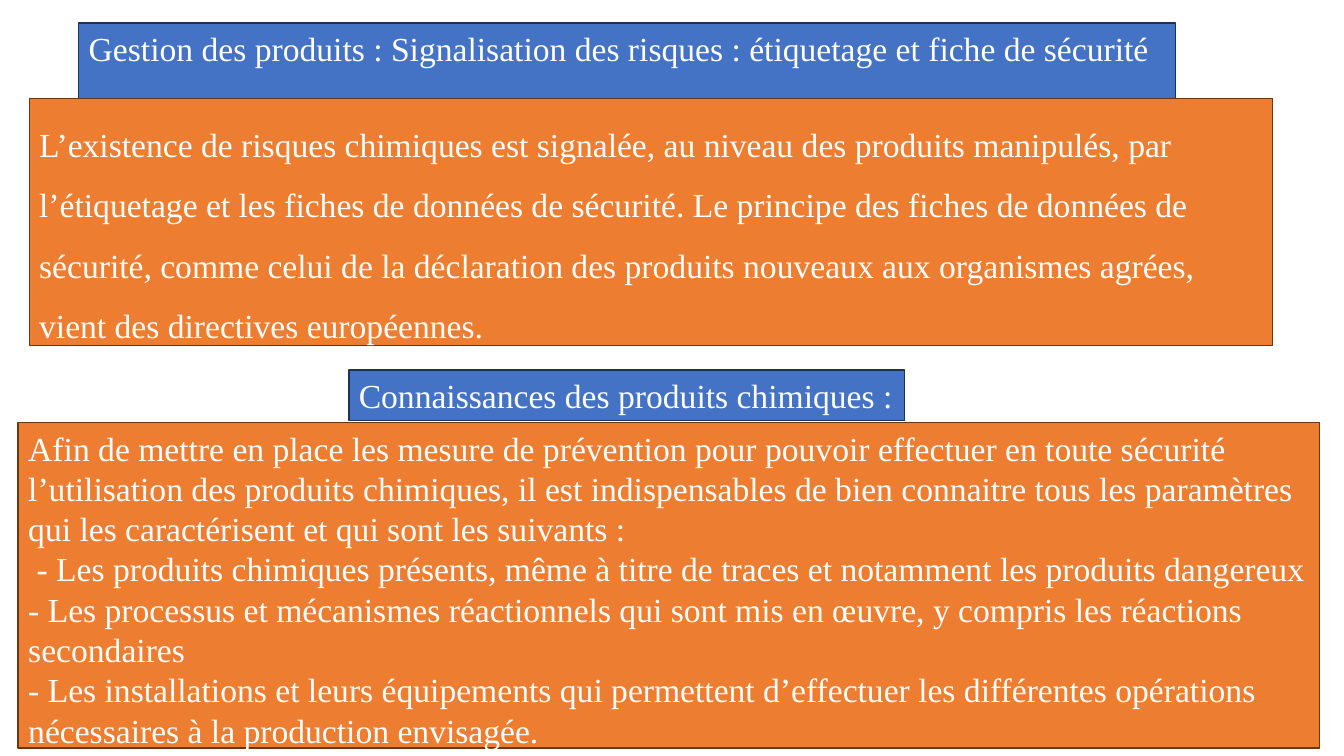
from dataclasses import dataclass

from lxml.etree import SubElement
from pptx import Presentation
from pptx.dml.color import RGBColor
from pptx.enum.shapes import MSO_SHAPE as Shape
from pptx.enum.text import MSO_ANCHOR as Anchor, MSO_AUTO_SIZE as AutoSize, PP_ALIGN as Align
from pptx.oxml.ns import qn
from pptx.util import Inches, Pt


@dataclass(frozen=True)
class Theme:
    font: str = "Times New Roman"
    size: int = 24
    text: str = "FFFFFF"
    heading: tuple = ("4472C4", "1E3256")
    passage: tuple = ("ED7D31", "683715")


THEME = Theme()

TITLE = "Gestion des produits : Signalisation des risques : étiquetage et fiche de sécurité"
SIGNALLING = (
    "L’existence de risques chimiques est signalée, au niveau des produits manipulés, par "
    "l’étiquetage et les fiches de données de sécurité. Le principe des fiches de données de "
    "sécurité, comme celui de la déclaration des produits nouveaux aux organismes agrées, "
    "vient des directives européennes."
)
SUBTITLE = "Connaissances des produits chimiques :"
KNOWLEDGE = [
    "Afin de mettre en place les mesure de prévention pour pouvoir effectuer en toute sécurité "
    "l’utilisation des produits chimiques, il est indispensables de bien connaitre tous les "
    "paramètres qui les caractérisent et qui sont les suivants :",
    " - Les produits chimiques présents, même à titre de traces et notamment les produits "
    "dangereux - Les processus et mécanismes réactionnels qui sont mis en œuvre, y compris "
    "les réactions secondaires",
    "- Les installations et leurs équipements qui permettent d’effectuer les différentes "
    "opérations nécessaires à la production envisagée.",
]


def write(frame, texts, size=THEME.size, color=THEME.text, spacing=1.0):
    frame.word_wrap = True
    frame.auto_size = AutoSize.SHAPE_TO_FIT_TEXT
    frame.vertical_anchor = Anchor.TOP
    for index, text in enumerate(texts):
        para = frame.add_paragraph() if index else frame.paragraphs[0]
        para.alignment = Align.LEFT
        para.line_spacing = spacing
        para.space_before = para.space_after = Pt(0)
        properties = para._p.get_or_add_pPr()
        properties.set("marL", "0")
        properties.set("indent", "0")
        SubElement(properties, qn("a:buNone"))
        span = para.add_run()
        span.text = text
        span.font.name = THEME.font
        span.font.size = Pt(size)
        span.font.color.rgb = RGBColor.from_string(color)


def panel(page, box, texts, colors, holder=None, **text_format):
    left, top, width, height = map(Inches, box)
    if holder is None:
        holder = page.shapes.add_shape(Shape.RECTANGLE, left, top, width, height)
        holder.shadow.inherit = False
    else:
        holder.left, holder.top, holder.width, holder.height = left, top, width, height
    fill, line = map(RGBColor.from_string, colors)
    holder.fill.solid()
    holder.fill.fore_color.rgb = fill
    holder.line.color.rgb = line
    holder.line.width = Pt(1)
    write(holder.text_frame, texts, **text_format)


def heading(page, box, text, holder=None):
    panel(page, box, [text], THEME.heading, holder)


def passage(page, box, texts, holder=None, spacing=1.0):
    panel(page, box, texts, THEME.passage, holder, spacing=spacing)


def main():
    deck = Presentation()
    deck.slide_width, deck.slide_height = Inches(13.33), Inches(7.5)
    page = deck.slides.add_slide(deck.slide_layouts[1])
    heading(page, (0.78, 0.23, 10.88, 0.5), TITLE, page.shapes.title)
    passage(page, (0.29, 0.98, 12.33, 2.45), [SIGNALLING], spacing=1.5)
    heading(page, (3.46, 3.67, 5.51, 0.5), SUBTITLE)
    passage(page, (0.18, 4.19, 12.91, 3.33), KNOWLEDGE, page.placeholders[1])
    deck.save("out.pptx")


if __name__ == "__main__":
    main()
